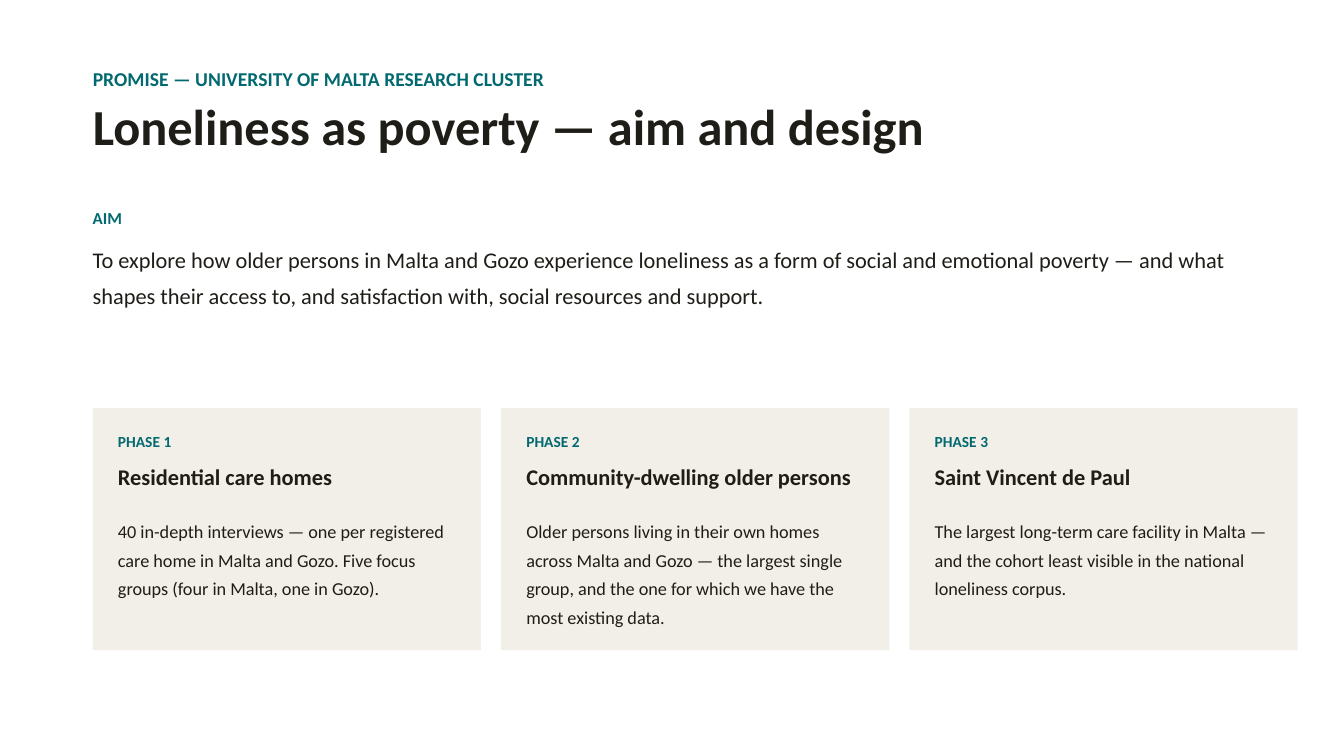
"""Build the slide on the aim and three-phase design of the loneliness study."""
from dataclasses import dataclass

from pptx import Presentation
from pptx import util as u
from pptx.dml.color import RGBColor
from pptx.enum import shapes, text

PX = 9144
FONT = "Calibri"
TEAL = RGBColor(0x01, 0x69, 0x6F)
INK = RGBColor(0x1F, 0x1D, 0x17)
SAND = RGBColor(0xF2, 0xEF, 0xE8)

LEFT, WIDTH = 92, 1150
CARD_TOP, CARD_W, CARD_H = 405, 385, 240
CARD_GAP, CARD_PAD = 20, 25


@dataclass(frozen=True)
class Style:
    size: int
    color: RGBColor
    bold: bool
    spacing: float


@dataclass(frozen=True)
class Phase:
    label: str
    heading: str
    detail: str


KICKER = Style(14, TEAL, True, 0.9)
TITLE = Style(36, INK, True, 0.9)
AIM_LABEL = Style(12, TEAL, True, 1.3)
AIM_TEXT = Style(16, INK, False, 1.35)
PHASE_LABEL = Style(11, TEAL, True, 1.3)
PHASE_HEADING = Style(16, INK, True, 1.15)
PHASE_DETAIL = Style(13, INK, False, 1.3)

PHASES = [
    Phase("PHASE 1", "Residential care homes",
          "40 in-depth interviews — one per registered care home in Malta and Gozo. "
          "Five focus groups (four in Malta, one in Gozo)."),
    Phase("PHASE 2", "Community-dwelling older persons",
          "Older persons living in their own homes across Malta and Gozo — the largest "
          "single group, and the one for which we have the most existing data."),
    Phase("PHASE 3", "Saint Vincent de Paul",
          "The largest long-term care facility in Malta — and the cohort least visible "
          "in the national loneliness corpus."),
]


def box(*px: int) -> list[u.Emu]:
    return [u.Emu(n * PX) for n in px]


def write(p, content: str, style: Style) -> None:
    p.text = content
    p.alignment = text.PP_ALIGN.LEFT
    p.line_spacing = style.spacing
    p.space_before = u.Pt(0)
    p.font.name = FONT
    p.font.size = u.Pt(style.size)
    p.font.bold = style.bold
    p.font.color.rgb = style.color


def set_frame(tf, inset_y: int) -> None:
    tf.word_wrap = True
    tf.margin_left = tf.margin_right = 0
    tf.margin_top = tf.margin_bottom = u.Emu(inset_y * PX)


def add_title(s, kicker: str, title: str) -> None:
    sp = s.shapes.title
    sp.left, sp.top, sp.width, sp.height = box(LEFT, 40, WIDTH, 145)
    tf = sp.text_frame
    set_frame(tf, 5)
    tf.auto_size = text.MSO_AUTO_SIZE.NONE
    tf.vertical_anchor = text.MSO_ANCHOR.MIDDLE
    write(tf.paragraphs[0], kicker, KICKER)
    p = tf.add_paragraph()
    write(p, title, TITLE)
    p.space_before = u.Pt(8)


def add_text(s, left: int, top: int, width: int, height: int,
             content: str, style: Style) -> None:
    tf = s.shapes.add_textbox(*box(left, top, width, height)).text_frame
    set_frame(tf, 0)
    tf.auto_size = text.MSO_AUTO_SIZE.SHAPE_TO_FIT_TEXT
    write(tf.paragraphs[0], content, style)


def add_card(s, left: int, phase: Phase) -> None:
    sp = s.shapes.add_shape(shapes.MSO_SHAPE.RECTANGLE,
                            *box(left, CARD_TOP, CARD_W, CARD_H))
    sp.shadow.inherit = False
    sp.fill.solid()
    sp.fill.fore_color.rgb = SAND
    sp.line.fill.background()
    x, w = left + CARD_PAD, CARD_W - 2 * CARD_PAD
    add_text(s, x, CARD_TOP + 18, w, 30, phase.label, PHASE_LABEL)
    add_text(s, x, CARD_TOP + 50, w, 45, phase.heading, PHASE_HEADING)
    add_text(s, x, CARD_TOP + 105, w, 120, phase.detail, PHASE_DETAIL)


def main() -> None:
    prs = Presentation()
    prs.slide_width, prs.slide_height = box(1333, 750)
    s = prs.slides.add_slide(prs.slide_layouts.get_by_name("Title Only"))
    add_title(s, "PROMISE — UNIVERSITY OF MALTA RESEARCH CLUSTER",
              "Loneliness as poverty — aim and design")
    add_text(s, LEFT, 200, WIDTH, 40, "AIM", AIM_LABEL)
    add_text(s, LEFT, 235, WIDTH, 130,
             "To explore how older persons in Malta and Gozo experience loneliness as a "
             "form of social and emotional poverty — and what shapes their access to, and "
             "satisfaction with, social resources and support.", AIM_TEXT)
    for i, phase in enumerate(PHASES):
        add_card(s, LEFT + i * (CARD_W + CARD_GAP), phase)
    prs.save("out.pptx")


if __name__ == "__main__":
    main()
